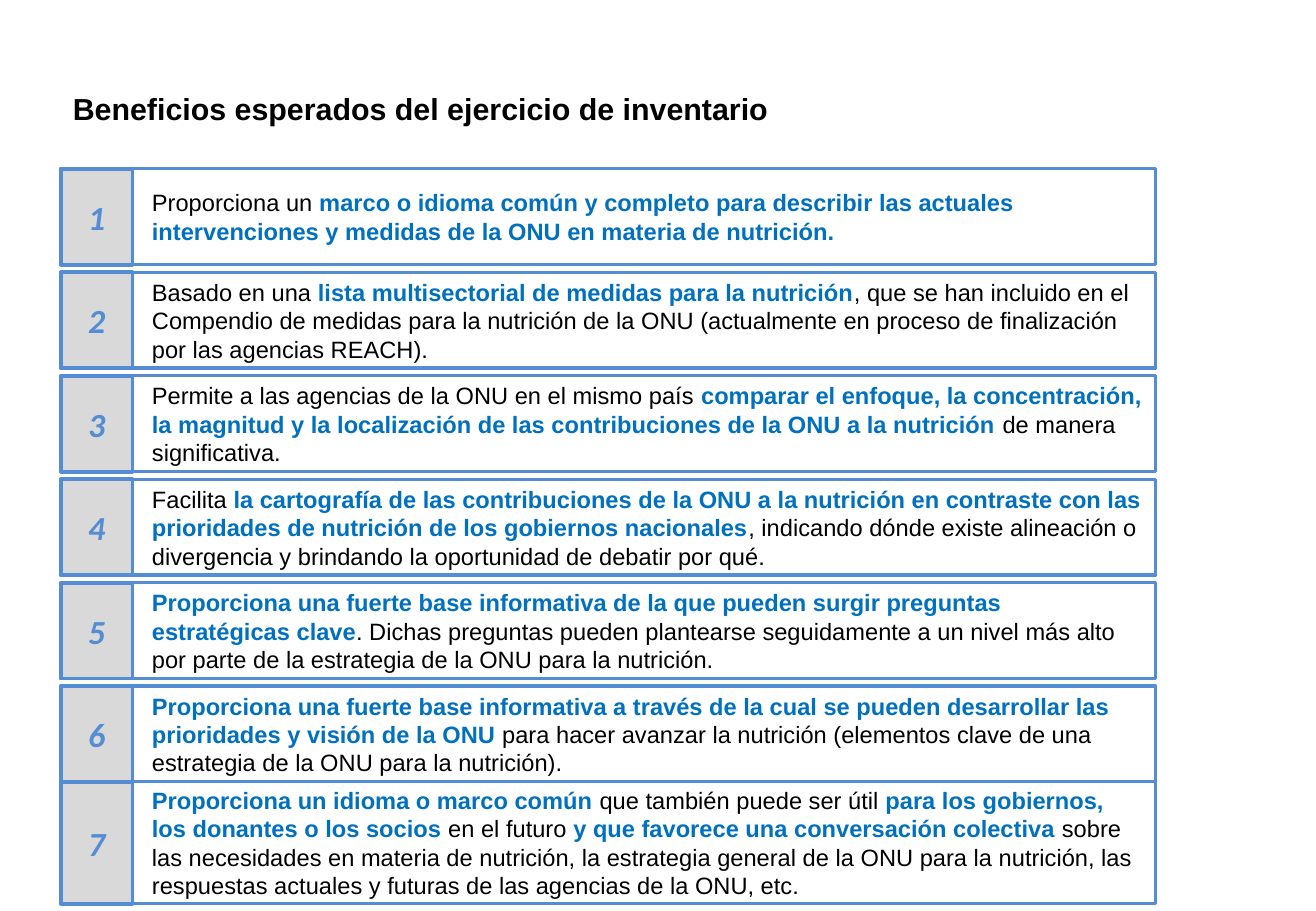
from pptx import Presentation
from pptx.dml.color import RGBColor
from pptx.enum.shapes import MSO_SHAPE as Shape
from pptx.enum.text import MSO_ANCHOR as Anchor, PP_ALIGN as Align
from pptx.util import Inches, Pt

COLORS = {
    "text": "000000",
    "emphasis": "0070C0",
    "border": "548DD4",
    "badge": "D9D9D9",
    "panel": "FFFFFF",
}
MARK = "*"
LEFT, PANEL_WIDTH, BADGE_WIDTH = 4.62, 83.2, 5.45
FIRST_TOP, ROW_PITCH, ROW_HEIGHT = 18.53, 11.36, 10.53
LAST_TOP, LAST_HEIGHT = 85.8, 13.4
SPACED_FROM = 3

HEADING = "Beneficios esperados del ejercicio de inventario"
BENEFITS = [
    "Proporciona un *marco o idioma común y completo para describir las actuales "
    "intervenciones y medidas de la ONU en materia de nutrición.",
    "Basado en una *lista multisectorial de medidas para la nutrición*, que se han "
    "incluido en el Compendio de medidas para la nutrición de la ONU (actualmente en "
    "proceso de finalización por las agencias REACH).",
    "Permite a las agencias de la ONU en el mismo país* comparar el enfoque, la "
    "concentración, la magnitud y la localización de las contribuciones de la ONU a la "
    "nutrición *de manera significativa.",
    "Facilita* la cartografía de las contribuciones de la ONU a la nutrición en "
    "contraste con las prioridades de nutrición de los gobiernos nacionales*, indicando "
    "dónde existe alineación o divergencia y brindando la oportunidad de debatir por qué.",
    "*Proporciona una fuerte base informativa de la que pueden surgir preguntas "
    "estratégicas clave*. Dichas preguntas pueden plantearse seguidamente a un nivel más "
    "alto por parte de la estrategia de la ONU para la nutrición.",
    "*Proporciona una fuerte base informativa a través de la cual se pueden desarrollar "
    "las prioridades y visión de la ONU *para hacer avanzar la nutrición (elementos clave "
    "de una estrategia de la ONU para la nutrición).",
    "*Proporciona un idioma o marco común *que también puede ser útil *para los "
    "gobiernos, los donantes o los socios* en el futuro *y que favorece una conversación "
    "colectiva *sobre las necesidades en materia de nutrición, la estrategia general de "
    "la ONU para la nutrición, las respuestas actuales y futuras de las agencias de la "
    "ONU, etc.",
]


class BenefitsSlide:
    def __init__(self, deck):
        self.width, self.height = deck.slide_width, deck.slide_height
        self.shapes = deck.slides.add_slide(deck.slide_layouts[6]).shapes

    def place(self, left, top, width, height):
        return (
            int(self.width * left / 100),
            int(self.height * top / 100),
            int(self.width * width / 100),
            int(self.height * height / 100),
        )

    def color(self, name):
        return RGBColor.from_string(COLORS[name])

    def style(self, font, name, size, color, bold=None, italic=None):
        font.name, font.size = name, Pt(size)
        font.color.rgb = self.color(color)
        font.bold, font.italic = bold, italic

    def heading(self, text, *area):
        frame = self.shapes.add_textbox(*self.place(*area)).text_frame
        frame.word_wrap = True
        frame.vertical_anchor = Anchor.BOTTOM
        line = frame.paragraphs[0]
        line.text = text
        self.style(line.font, "Arial", 18, "text", bold=True)

    def box(self, area, fill, border, insets):
        box = self.shapes.add_shape(Shape.RECTANGLE, *self.place(*area))
        box.shadow.inherit = False
        box.fill.solid()
        box.fill.fore_color.rgb = self.color(fill)
        box.line.color.rgb = self.color("border")
        box.line.width = Pt(border)
        frame = box.text_frame
        frame.word_wrap = True
        frame.vertical_anchor = Anchor.MIDDLE
        frame.margin_left, frame.margin_right = Inches(insets[0]), Inches(insets[1])
        frame.margin_top = frame.margin_bottom = Inches(insets[2])
        return frame.paragraphs[0]

    def panel(self, text, top, height, spacing):
        area = (LEFT, top, PANEL_WIDTH, height)
        benefit = self.box(area, "panel", 2, (0.75, 0.1, 0.05))
        benefit.alignment = Align.LEFT
        benefit.space_before = benefit.space_after = Pt(spacing)
        self.style(benefit.font, "Arial", 14, "text")
        for order, words in enumerate(text.split(MARK)):
            if words:
                emphasized = order % 2 == 1
                phrase = benefit.add_run()
                phrase.text = words
                phrase.font.bold = emphasized
                phrase.font.color.rgb = self.color("emphasis" if emphasized else "text")

    def badge(self, number, top, height):
        area = (LEFT, top, BADGE_WIDTH, height)
        numeral = self.box(area, "badge", 2.25, (0.1, 0.1, 0.1))
        numeral.text = str(number)
        numeral.alignment = Align.CENTER
        self.style(numeral.font, "Calibri", 20, "border", bold=True, italic=True)


def main():
    deck = Presentation()
    deck.slide_width, deck.slide_height = Inches(10.83), Inches(7.5)
    slide = BenefitsSlide(deck)
    slide.heading(HEADING, LEFT, 2.4, 90.77, 12.13)
    for number, benefit in enumerate(BENEFITS, 1):
        top, height = FIRST_TOP + ROW_PITCH * (number - 1), ROW_HEIGHT
        if number == len(BENEFITS):
            top, height = LAST_TOP, LAST_HEIGHT
        slide.panel(benefit, top, height, 4 if number >= SPACED_FROM else 0)
        slide.badge(number, top, height)
    deck.save("out.pptx")


if __name__ == "__main__":
    main()
